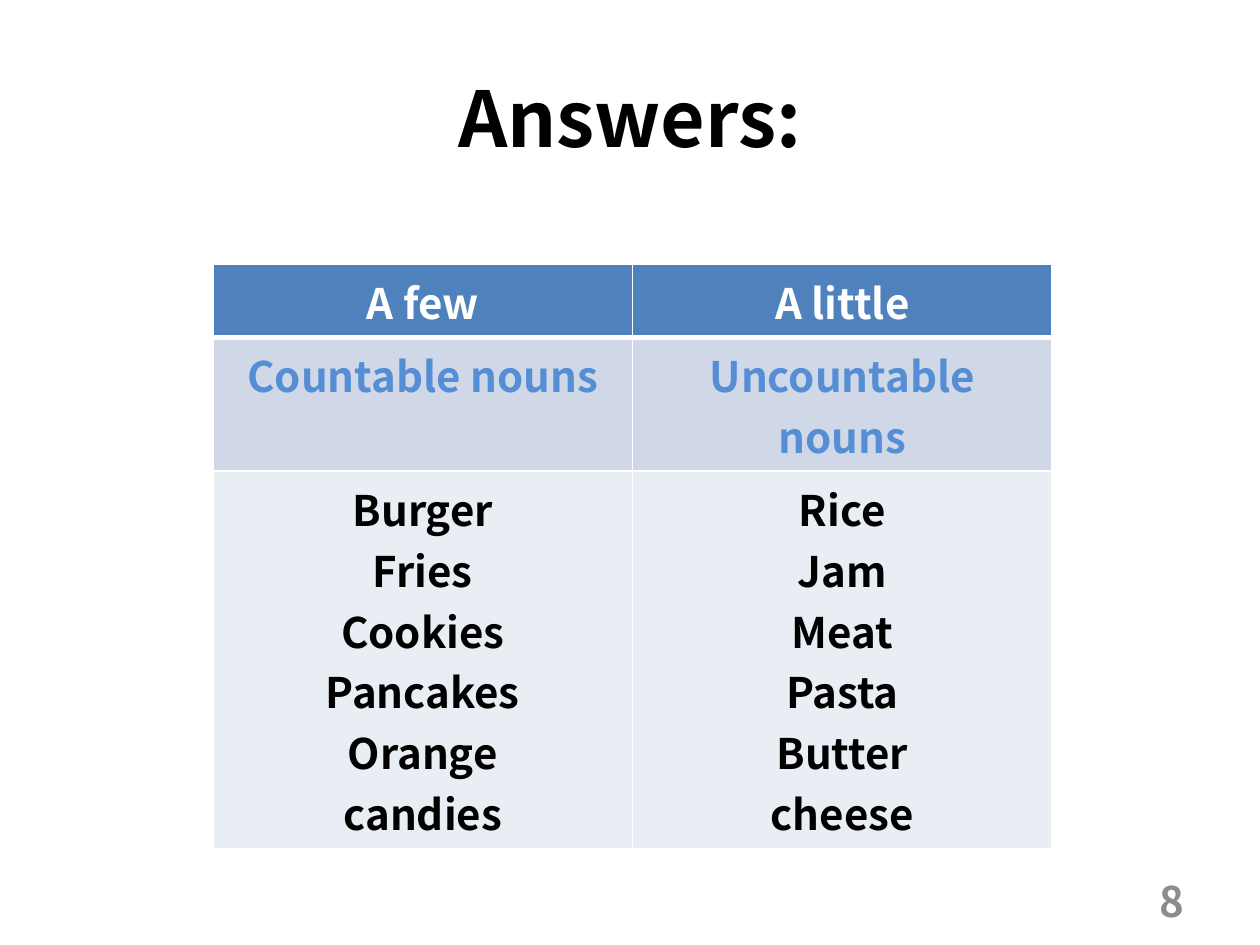
from typing import NamedTuple

from lxml.etree import SubElement
from pptx import Presentation
from pptx.dml.color import RGBColor
from pptx.enum.text import MSO_ANCHOR as Anchor, PP_ALIGN as Align
from pptx.oxml.ns import qn
from pptx.util import Inches, Pt

FONT = "Noto Sans CJK KR"
COLORS = {
    "black": "000000",
    "white": "FFFFFF",
    "gray": "8C8C8C",
    "header": "4F81BD",
    "subheader": "D0D8E8",
    "body": "E9EDF4",
    "accent": "558ED5",
}


class AnswerRow(NamedTuple):
    cells: tuple[str, str]
    height: float
    fill: str
    color: str
    bottom_border: float = 1


ROWS = [
    AnswerRow(("A few", "A little"), 0.58, "header", "white", 3),
    AnswerRow(("Countable nouns", "Uncountable nouns"), 1.06, "subheader", "accent"),
    AnswerRow(
        (
            "Burger\nFries\nCookies\nPancakes\nOrange\ncandies",
            "Rice\nJam\nMeat\nPasta\nButter\ncheese",
        ),
        3,
        "body",
        "black",
    ),
]


def write_text(frame, text: str, *, size: float = 24, color: str = "black",
               align=Align.CENTER) -> None:
    """Fill a text frame with one bold paragraph per line of text."""
    frame.text = text
    for paragraph in frame.paragraphs:
        paragraph.alignment = align
        for run in paragraph.runs:
            run.font.name = FONT
            run.font.size = Pt(size)
            run.font.bold = True
            run.font.color.rgb = RGBColor.from_string(COLORS[color])


def add_borders(cell, widths: dict[str, float]) -> None:
    """Draw white cell borders; they must precede the fill in the XML."""
    properties = cell._tc.get_or_add_tcPr()
    for side, width in widths.items():
        line = SubElement(properties, qn(f"a:ln{side}"), w=str(Pt(width)))
        solid = SubElement(line, qn("a:solidFill"))
        SubElement(solid, qn("a:srgbClr"), val=COLORS["white"])


def add_answer_table(slide, rows: list[AnswerRow]) -> None:
    height = sum(row.height for row in rows)
    table = slide.shapes.add_table(
        len(rows), 2, Inches(1.69), Inches(2.1), Inches(6.66), Inches(height)).table
    table.horz_banding = False
    top_border = 1
    for row_index, row in enumerate(rows):
        table.rows[row_index].height = Inches(row.height)
        for column_index, text in enumerate(row.cells):
            cell = table.cell(row_index, column_index)
            add_borders(cell, {"L": 1, "R": 1, "T": top_border, "B": row.bottom_border})
            cell.fill.solid()
            cell.fill.fore_color.rgb = RGBColor.from_string(COLORS[row.fill])
            write_text(cell.text_frame, text, color=row.color)
        top_border = row.bottom_border


def main() -> None:
    presentation = Presentation()
    presentation.slide_width = Inches(10)
    presentation.slide_height = Inches(7.5)
    slide = presentation.slides.add_slide(presentation.slide_layouts[5])

    # Title
    title = slide.shapes.title
    title.left, title.top = Inches(0.5), Inches(0.3)
    title.width, title.height = Inches(9), Inches(1.25)
    title.text_frame.vertical_anchor = Anchor.MIDDLE
    write_text(title.text_frame, "Answers:", size=44)

    # Slide number
    number = slide.shapes.add_textbox(
        Inches(7.17), Inches(6.95), Inches(2.33), Inches(0.4))
    number.text_frame.word_wrap = True
    number.text_frame.vertical_anchor = Anchor.MIDDLE
    write_text(number.text_frame, "8", color="gray", align=Align.RIGHT)

    # Answer table
    add_answer_table(slide, ROWS)

    presentation.save("out.pptx")


if __name__ == "__main__":
    main()
